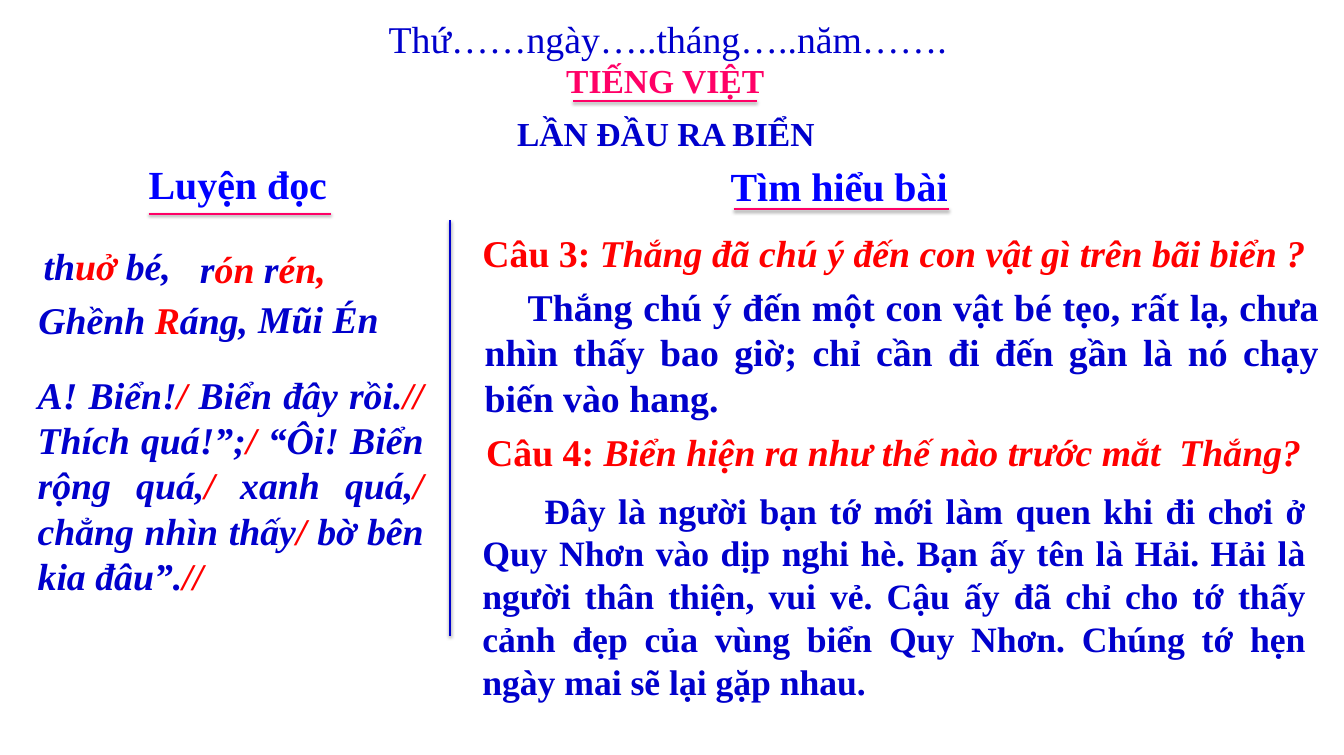
from lxml import etree
from pptx import Presentation
from pptx.dml.color import RGBColor
from pptx.enum.shapes import MSO_CONNECTOR
from pptx.enum.text import MSO_ANCHOR, MSO_AUTO_SIZE, PP_ALIGN
from pptx.oxml.ns import qn
from pptx.util import Inches, Pt

CENTER, JUSTIFY, LEFT = PP_ALIGN.CENTER, PP_ALIGN.JUSTIFY, PP_ALIGN.LEFT
TOP = MSO_ANCHOR.TOP
FIT_SHAPE = MSO_AUTO_SIZE.SHAPE_TO_FIT_TEXT
STRAIGHT = MSO_CONNECTOR.STRAIGHT
FONT = "Times New Roman"
COLORS = {"navy": "0000CC", "blue": "0000FF", "pink": "FF0066",
          "red": "FF0000", "shadow": "000000"}


def rgb(name):
    return RGBColor.from_string(COLORS[name])


def set_text(sp, text, size, color, align, bold=True, italic=False,
             wrap=True, indent=0, insets=(0.1, 0.05)):
    tf = sp.text_frame
    tf.word_wrap = wrap
    tf.auto_size = FIT_SHAPE
    tf.vertical_anchor = TOP
    tf.margin_left = tf.margin_right = Inches(insets[0])
    tf.margin_top = tf.margin_bottom = Inches(insets[1])
    p = tf.paragraphs[0]
    p.alignment = align
    if indent:
        p._p.get_or_add_pPr().set("indent", str(Inches(indent)))
    p.font.name, p.font.size = FONT, Pt(size)
    p.font.bold, p.font.italic = bold, italic
    p.font.color.rgb = rgb(color)
    for part in text.split("|"):
        p.add_run().text = part
    return p


def add_text(slide, box, text, size, color, align, **style):
    sp = slide.shapes.add_textbox(*map(Inches, box))
    return set_text(sp, text, size, color, align, **style)


def add_title(slide, box, text):
    sp = slide.shapes.title
    sp.left, sp.top, sp.width, sp.height = map(Inches, box)
    set_text(sp, text, 32, "navy", CENTER, insets=(0.16, 0.08))


def add_heading(slide, box, text):
    add_text(slide, box, text, 38, "blue", CENTER, wrap=False,
             insets=(0.08, 0.04))


def add_question(slide, box, text):
    p = add_text(slide, box, text, 36, "red", JUSTIFY)
    p.runs[1].font.italic = True


def add_reading(slide, box, text):
    p = add_text(slide, box, text, 36, "navy", JUSTIFY, italic=True)
    for r in p.runs[1::2]:
        r.font.color.rgb = rgb("red")


def add_rule(slide, start, end, color):
    c = slide.shapes.add_connector(STRAIGHT, *map(Inches, start + end))
    c.line.color.rgb = rgb(color)
    c.line.width = Pt(2)
    effects = etree.SubElement(c._element.spPr, qn("a:effectLst"))
    shadow = etree.SubElement(effects, qn("a:outerShdw"), blurRad=str(Pt(3.1)),
                              dist=str(Pt(1.6)), dir="5400000", rotWithShape="0")
    fill = etree.SubElement(shadow, qn("a:srgbClr"), val=COLORS["shadow"])
    etree.SubElement(fill, qn("a:alpha"), val="38000")


def main():
    prs = Presentation()
    prs.slide_width, prs.slide_height = Inches(17.8), Inches(10)
    slide = prs.slides.add_slide(prs.slide_layouts[5])

    add_text(slide, (5.05, 0.16, 7.67, 0.71), "Thứ……ngày…..tháng…..năm…….",
             36, "navy", LEFT, bold=False, wrap=False)
    add_text(slide, (7.4, 0.75, 2.85, 0.64), "TIẾNG VIỆT",
             32, "pink", LEFT, wrap=False)
    add_title(slide, (6.32, 1.41, 5, 0.7), "LẦN ĐẦU RA BIỂN")
    add_heading(slide, (1.88, 2.07, 2.54, 0.72), "Luyện đọc")
    add_heading(slide, (9.59, 2.1, 3.05, 0.72), "Tìm hiểu bài")

    for left, right, y in [(7.59, 10.03, 1.34), (1.97, 4.38, 2.83),
                           (9.72, 12.57, 2.77)]:
        add_rule(slide, (left, y), (right, y), "pink")
    add_rule(slide, (5.96, 2.92), (5.96, 8.42), "navy")

    for box, text in [
        ((0.48, 3.16, 2.17, 0.71), "th|uở| bé,"),
        ((2.55, 3.2, 2.13, 0.71), "|r|ón |r|én,".lstrip("|")),
        ((0.41, 3.88, 3.33, 0.71), "Ghềnh |R|áng,"),
        ((3.32, 3.87, 2.5, 0.71), "Mũi Én"),
        ((0.4, 4.87, 5.31, 3.13),
         "A! Biển!|/ |Biển đây rồi.|// |Thích quá!”;|/ |“Ôi! Biển rộng quá,|/ |"
         "xanh quá,|/| chẳng nhìn thấy|/ |bờ bên kia đâu”.|//"),
    ]:
        add_reading(slide, box, text)

    add_question(slide, (6.29, 3, 11.19, 0.71),
                 "Câu 3: |Thắng đã chú ý đến con vật gì trên bãi biển ?")
    add_text(slide, (6.32, 3.71, 11.25, 1.92),
             "Thắng chú ý đến một con vật bé tẹo, rất lạ, chưa nhìn thấy bao giờ; "
             "chỉ cần đi đến gần là nó chạy biến vào hang.",
             36, "navy", JUSTIFY, indent=0.57)
    add_question(slide, (6.34, 5.63, 11.31, 0.71),
                 "Câu 4: |Biển hiện ra như thế nào trước mắt  Thắng?")
    add_text(slide, (6.29, 6.42, 11.11, 2.96),
             "Đây là người bạn tớ mới làm quen khi đi chơi ở Quy Nhơn vào dịp nghi "
             "hè. Bạn ấy tên là Hải. Hải là người thân thiện, vui vẻ. Cậu ấy đã chỉ "
             "cho tớ thấy cảnh đẹp của vùng biển Quy Nhơn. Chúng tớ hẹn ngày mai sẽ "
             "lại gặp nhau.",
             34, "navy", JUSTIFY, indent=0.82)
    prs.save("out.pptx")


if __name__ == "__main__":
    main()
